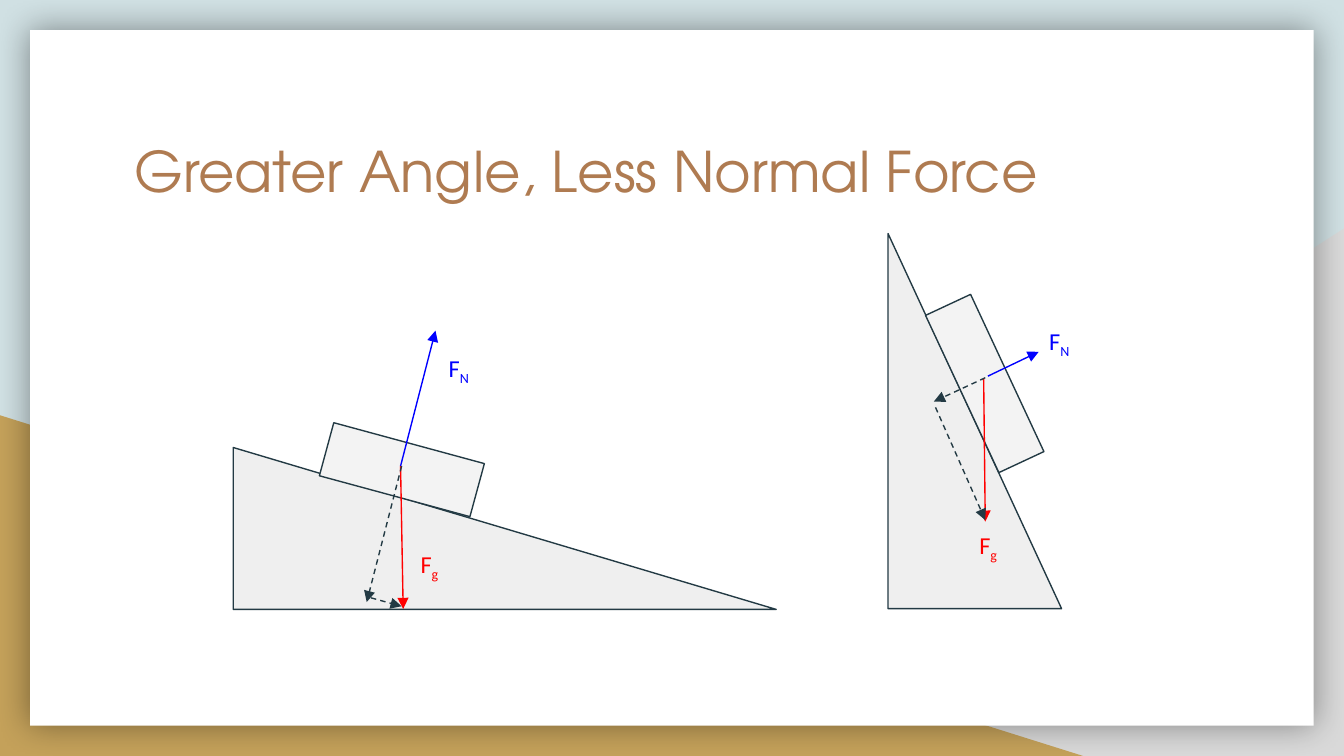
"""Build a slide comparing normal force on a shallow and a steep ramp."""
from lxml.etree import SubElement
from pptx import Presentation
from pptx.dml.color import RGBColor
from pptx.enum.dml import MSO_LINE
from pptx.enum.shapes import MSO_CONNECTOR, MSO_SHAPE
from pptx.enum.text import MSO_ANCHOR, MSO_AUTO_SIZE, PP_ALIGN
from pptx.oxml import parse_xml
from pptx.oxml.ns import nsdecls, qn
from pptx.util import Cm, Pt

SKY = RGBColor(0xD0, 0xE0, 0xE3)
GRAY = RGBColor(0xD9, 0xD9, 0xD9)
GOLD = RGBColor(0xC4, 0xA1, 0x5A)
WHITE = RGBColor(0xFF, 0xFF, 0xFF)
BROWN = RGBColor(0xAF, 0x7B, 0x51)
RAMP = RGBColor(0xEF, 0xEF, 0xEF)
BLOCK = RGBColor(0xF3, 0xF3, 0xF3)
INK = RGBColor(0x23, 0x3A, 0x44)
BLUE = RGBColor(0x00, 0x00, 0xFF)
RED = RGBColor(0xFF, 0x00, 0x00)

TRI, RECT = MSO_SHAPE.RIGHT_TRIANGLE, MSO_SHAPE.RECTANGLE
TITLE = "Greater Angle, Less Normal Force"
TITLE_BOX = (2.29, 2.34, 20.85, 2.64)
LABEL_SIZE = (1.4, 1.24)

BACK = [
    (TRI, (9.96, 4.32, 15.44, 9.97), dict(fill=GRAY, flip=True)),
    (TRI, (0, 7.85, 20.47, 6.44), dict(fill=GOLD)),
    (RECT, (0.57, 0.57, 24.26, 13.15), dict(fill=WHITE, glow=True)),
]
SCENES = [
    dict(
        solids=[
            (TRI, (4.41, 8.46, 10.26, 3.06), dict(fill=RAMP, line=INK)),
            (RECT, (6.12, 8.36, 2.95, 1.04), dict(fill=BLOCK, line=INK, turn=15.2)),
        ],
        arrows=[
            ((7.57, 8.81), (8.23, 6.25), BLUE, False),
            ((7.57, 8.81), (7.62, 11.51), RED, False),
            ((7.59, 8.81), (6.93, 11.38), INK, True),
            ((7.01, 11.3), (7.59, 11.46), INK, True),
        ],
        labels=[("N", (8.23, 6.43), BLUE), ("g", (7.7, 10.13), RED)],
    ),
    dict(
        solids=[
            (TRI, (14.88, 6.32, 7.09, 3.28),
             dict(fill=RAMP, line=INK, turn=90, flip=True)),
            (RECT, (16.97, 6.78, 3.28, 0.94), dict(fill=BLOCK, line=INK, turn=65)),
        ],
        arrows=[
            ((18.59, 7.16), (18.62, 9.86), RED, False),
            ((17.68, 7.7), (18.62, 9.83), INK, True),
            ((18.62, 7.14), (17.65, 7.59), INK, True),
            ((18.67, 7.11), (19.63, 6.65), BLUE, False),
        ],
        labels=[("N", (19.58, 5.92), BLUE), ("g", (18.26, 9.78), RED)],
    ),
]
GLOW = (
    f'<a:effectLst {nsdecls("a")}><a:outerShdw blurRad="{Pt(18)}" dist="0" '
    'algn="ctr" rotWithShape="0"><a:srgbClr val="000000"><a:alpha val="40000"/>'
    "</a:srgbClr></a:outerShdw></a:effectLst>"
)


def add_solid(shapes, kind, box, fill, line=None, turn=0, flip=False, glow=False):
    shape = shapes.add_shape(kind, *map(Cm, box))
    shape.fill.solid()
    shape.fill.fore_color.rgb = fill
    if line is None:
        shape.line.fill.background()
    else:
        shape.line.color.rgb = line
        shape.line.width = Pt(0.75)
    shape.rotation = turn
    props = shape._element.spPr
    if flip:
        props.find(qn("a:xfrm")).set("flipH", "1")
    if glow:
        props.append(parse_xml(GLOW))
    else:
        shape.shadow.inherit = False


def add_arrow(shapes, start, end, color, dashed):
    arrow = shapes.add_connector(MSO_CONNECTOR.STRAIGHT, *map(Cm, start + end))
    arrow.line.color.rgb = color
    arrow.line.width = Pt(0.75)
    if dashed:
        arrow.line.dash_style = MSO_LINE.DASH
    props = arrow._element.spPr
    SubElement(props.find(qn("a:ln")), qn("a:tailEnd"), type="triangle")
    SubElement(props, qn("a:effectLst"))


def write(shape, text, sub="", *, font, size, color):
    frame = shape.text_frame
    frame.word_wrap = True
    frame.auto_size = MSO_AUTO_SIZE.NONE
    frame.vertical_anchor = MSO_ANCHOR.TOP
    frame.margin_left = frame.margin_right = Cm(0.25)
    frame.margin_top = frame.margin_bottom = Cm(0.25)
    para = frame.paragraphs[0]
    para.alignment = PP_ALIGN.LEFT
    for part in filter(None, (text, sub)):
        run = para.add_run()
        run.text = part
        run.font.name = font
        run.font.size = Pt(size)
        run.font.color.rgb = color
    if sub:
        run._r.get_or_add_rPr().set("baseline", "-25000")


def main():
    deck = Presentation()
    deck.slide_width, deck.slide_height = Cm(25.4), Cm(14.29)
    slide = deck.slides.add_slide(deck.slide_layouts[5])
    slide.background.fill.solid()
    slide.background.fill.fore_color.rgb = SKY
    for kind, box, style in BACK:
        add_solid(slide.shapes, kind, box, **style)

    title = slide.shapes.title
    title.left, title.top, title.width, title.height = map(Cm, TITLE_BOX)
    write(title, TITLE, font="TeX Gyre Adventor", size=30, color=BROWN)
    slide.shapes._spTree.append(title._element)

    for scene in SCENES:
        shapes = slide.shapes.add_group_shape().shapes
        for kind, box, style in scene["solids"]:
            add_solid(shapes, kind, box, **style)
        for arrow in scene["arrows"]:
            add_arrow(shapes, *arrow)
        for sub, spot, color in scene["labels"]:
            label = shapes.add_textbox(*map(Cm, spot + LABEL_SIZE))
            write(label, "F", sub, font="Calibri", size=13, color=color)
    deck.save("out.pptx")


if __name__ == "__main__":
    main()
